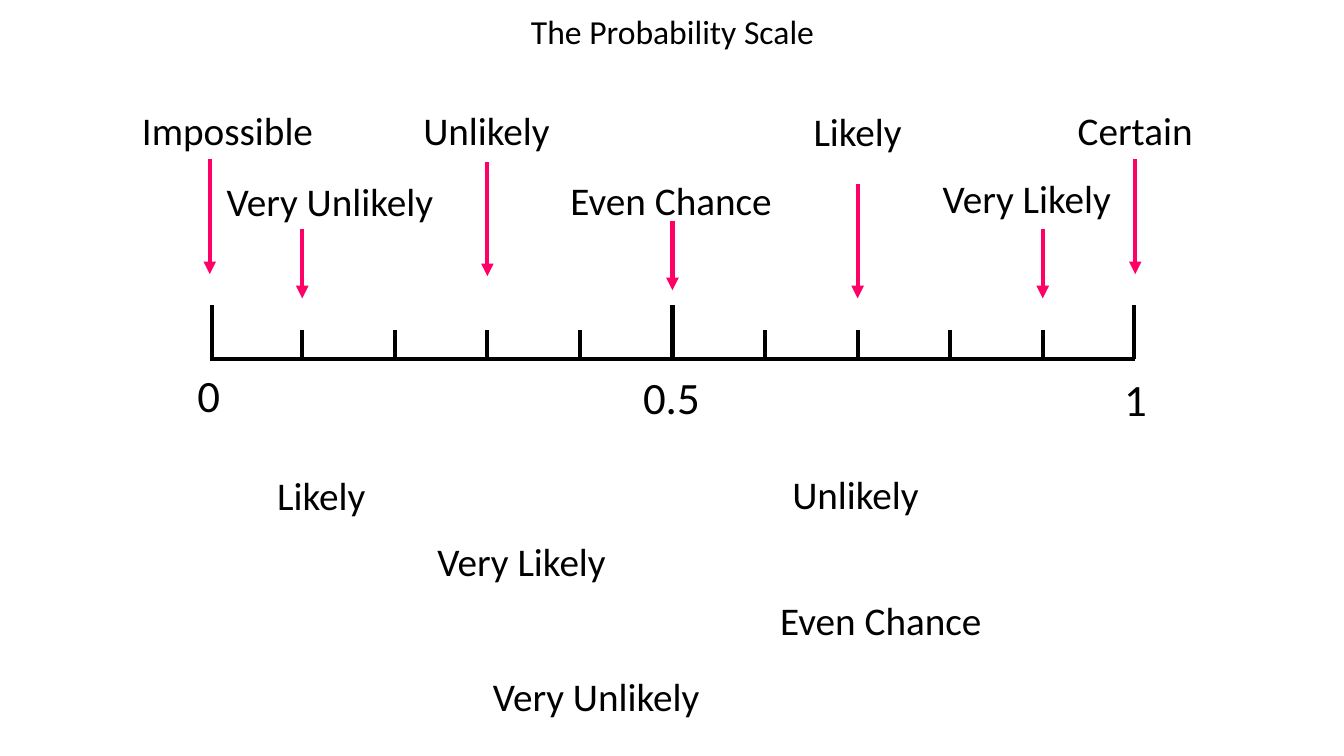
from dataclasses import dataclass

from lxml.etree import SubElement
from pptx import Presentation
from pptx.dml.color import RGBColor
from pptx.enum.shapes import MSO_CONNECTOR
from pptx.enum.text import MSO_AUTO_SIZE, PP_ALIGN
from pptx.oxml.ns import qn
from pptx.util import Inches, Pt

TITLE = "The Probability Scale"

# word, tick it points to, label left and top, arrow top and length
OUTCOMES = [
    ("Impossible", 0, 1.31, 1.01, 1.58, 1.14),
    ("Very Unlikely", 1, 2.15, 1.71, 2.27, 0.69),
    ("Unlikely", 3, 4.1, 1.01, 1.61, 1.13),
    ("Even Chance", 5, 5.56, 1.7, 2.19, 0.69),
    ("Likely", 7, 7.97, 1.02, 1.83, 1.13),
    ("Very Likely", 9, 9.25, 1.68, 2.27, 0.69),
    ("Certain", 10, 10.59, 1.01, 1.58, 1.14),
]
# word, left, top
WORD_BANK = [
    ("Even Chance", 7.64, 5.87),
    ("Unlikely", 7.76, 4.62),
    ("Likely", 2.65, 4.63),
    ("Very Likely", 4.24, 5.28),
    ("Very Unlikely", 4.79, 6.62),
]
# number, left, top
SCALE_NUMBERS = [("0", 1.86, 3.6), ("0.5", 6.28, 3.62), ("1", 11.05, 3.64)]

BOX_WIDTHS = {
    "Impossible": 1.92, "Very Unlikely": 2.27, "Unlikely": 1.47,
    "Even Chance": 2.22, "Likely": 1.08, "Very Likely": 1.89,
    "Certain": 1.35, "0": 0.43, "0.5": 0.77, "1": 0.43, TITLE: 3.04,
}

SCALE_LEFT, SCALE_RIGHT, SCALE_Y = 2.08, 11.26, 3.56
DIVISIONS = 10
SHORT_TICK, LONG_TICK = 0.29, 0.53


@dataclass(frozen=True)
class Theme:
    font: str = "Calibri"
    ink: RGBColor = RGBColor(0, 0, 0)
    arrow: RGBColor = RGBColor(0xFF, 0x00, 0x66)
    title: int = 24
    word: int = 28
    number: int = 32
    stroke: int = 3


THEME = Theme()


def tick_x(tick):
    return SCALE_LEFT + (SCALE_RIGHT - SCALE_LEFT) * tick / DIVISIONS


def add_label(slide, words, left, top, size, align=PP_ALIGN.LEFT):
    height = size * 0.02
    label = slide.shapes.add_textbox(
        Inches(left), Inches(top), Inches(BOX_WIDTHS[words]), Inches(height))
    frame = label.text_frame
    frame.text = words
    frame.word_wrap = False
    frame.auto_size = MSO_AUTO_SIZE.SHAPE_TO_FIT_TEXT
    paragraph = frame.paragraphs[0]
    paragraph.alignment = align
    font = paragraph.runs[0].font
    font.name, font.size, font.color.rgb = THEME.font, Pt(size), THEME.ink


def add_line(slide, start, end, color=THEME.ink, arrowhead=False):
    line = slide.shapes.add_connector(
        MSO_CONNECTOR.STRAIGHT, *map(Inches, (*start, *end)))
    line.line.color.rgb = color
    line.line.width = Pt(THEME.stroke)
    if arrowhead:
        SubElement(line.line._get_or_add_ln(), qn("a:tailEnd"), type="triangle")
    SubElement(line._element.spPr, qn("a:effectLst"))


def add_scale(slide):
    add_line(slide, (SCALE_LEFT, SCALE_Y), (SCALE_RIGHT, SCALE_Y))
    for tick in range(DIVISIONS + 1):
        x = tick_x(tick)
        if tick == 0:
            x += 0.02
        elif tick == DIVISIONS:
            x -= 0.01
        height = SHORT_TICK if tick % (DIVISIONS // 2) else LONG_TICK
        add_line(slide, (x, SCALE_Y), (x, SCALE_Y - height))
    for number, left, top in SCALE_NUMBERS:
        add_label(slide, number, left, top, THEME.number)


def main():
    prs = Presentation()
    prs.slide_width, prs.slide_height = Inches(13.33), Inches(7.5)
    slide = prs.slides.add_slide(prs.slide_layouts[6])

    add_label(slide, TITLE, 5.15, 0.06, THEME.title, PP_ALIGN.CENTER)
    add_scale(slide)
    for word, tick, left, top, arrow_top, length in OUTCOMES:
        add_label(slide, word, left, top, THEME.word)
        x = tick_x(tick)
        add_line(slide, (x, arrow_top), (x, arrow_top + length), THEME.arrow, True)
    for word, left, top in WORD_BANK:
        add_label(slide, word, left, top, THEME.word)

    prs.save("out.pptx")


if __name__ == "__main__":
    main()
